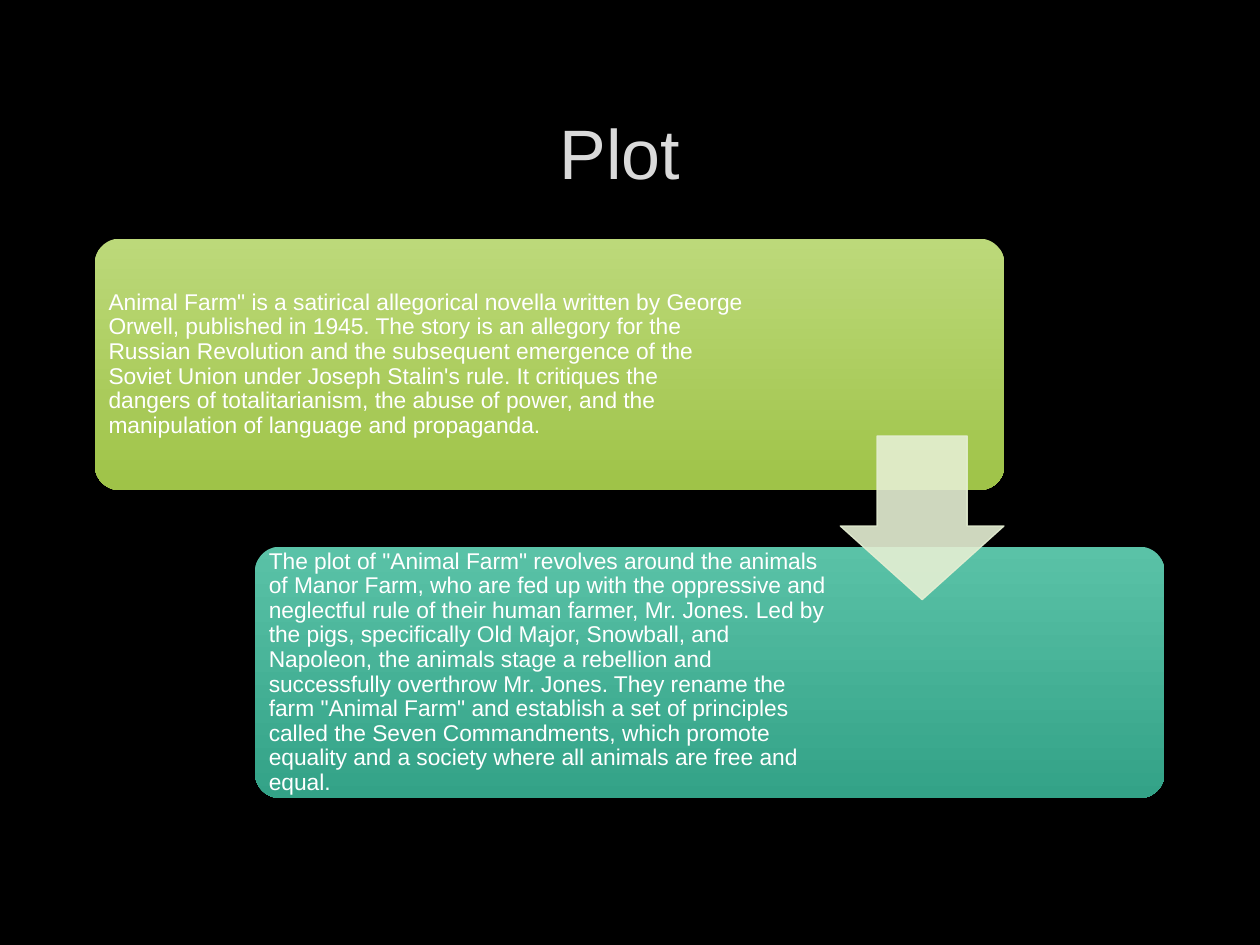
from lxml import etree
from pptx import Presentation
from pptx.dml.color import RGBColor
from pptx.enum import shapes, text
from pptx.oxml import ns
from pptx.util import Cm, Pt

BLACK = RGBColor(0x00, 0x00, 0x00)
GREY = RGBColor(0xDA, 0xDA, 0xDA)
WHITE = RGBColor(0xFF, 0xFF, 0xFF)
PALE = RGBColor(0xE5, 0xEF, 0xD3)
LIME = (RGBColor(0xBC, 0xD9, 0x7A), RGBColor(0x9F, 0xC3, 0x48))
TEAL = (RGBColor(0x5A, 0xC2, 0xA7), RGBColor(0x33, 0xA2, 0x87))

ABOUT = (
    "Animal Farm\" is a satirical allegorical novella written by George Orwell, "
    "published in 1945. The story is an allegory for the Russian Revolution and "
    "the subsequent emergence of the Soviet Union under Joseph Stalin's rule. It "
    "critiques the dangers of totalitarianism, the abuse of power, and the "
    "manipulation of language and propaganda."
)
STORY = (
    "The plot of \"Animal Farm\" revolves around the animals of Manor Farm, who "
    "are fed up with the oppressive and neglectful rule of their human farmer, "
    "Mr. Jones. Led by the pigs, specifically Old Major, Snowball, and Napoleon, "
    "the animals stage a rebellion and successfully overthrow Mr. Jones. They "
    "rename the farm \"Animal Farm\" and establish a set of principles called the "
    "Seven Commandments, which promote equality and a society where all animals "
    "are free and equal."
)


def style(para, size, color):
    for run in para.runs:
        run.font.name = "Arial"
        run.font.size = Pt(size)
        run.font.color.rgb = color


deck = Presentation()
deck.slide_width, deck.slide_height = Cm(25.4), Cm(19.05)
slide = deck.slides.add_slide(deck.slide_layouts[5])
slide.background.fill.solid()
slide.background.fill.fore_color.rgb = BLACK

title = slide.shapes.title
title.left, title.top = Cm(1.91), Cm(1.7)
title.width, title.height = Cm(21.56), Cm(2.69)
frame = title.text_frame
frame.text = "Plot "
frame.vertical_anchor = text.MSO_ANCHOR.MIDDLE
frame.paragraphs[0].alignment = text.PP_ALIGN.CENTER
style(frame.paragraphs[0], 40, GREY)

steps = [
    (1.91, 4.81, 13.08, LIME, ABOUT),
    (5.14, 11.02, 11.51, TEAL, STORY),
]
for left, top, width, shades, words in steps:
    card = slide.shapes.add_shape(
        shapes.MSO_SHAPE.ROUNDED_RECTANGLE, Cm(left), Cm(top), Cm(18.34), Cm(5.07)
    )
    card.adjustments[0] = 0.1
    card.shadow.inherit = False
    card.line.fill.background()
    card.fill.gradient()
    card.fill.gradient_angle = 270
    for stop, shade, place in zip(card.fill.gradient_stops, shades, (0, 1)):
        stop.color.rgb = shade
        stop.position = place

    box = slide.shapes.add_textbox(
        Cm(left + 0.15), Cm(top + 0.15), Cm(width), Cm(4.77)
    )
    frame = box.text_frame
    frame.word_wrap = True
    frame.vertical_anchor = text.MSO_ANCHOR.MIDDLE
    frame.margin_left = frame.margin_right = Cm(0.13)
    frame.margin_top = frame.margin_bottom = Cm(0.13)
    frame.text = words
    frame.paragraphs[0].line_spacing = 0.9
    style(frame.paragraphs[0], 13, WHITE)

arrow = slide.shapes.add_shape(
    shapes.MSO_SHAPE.DOWN_ARROW, Cm(16.94), Cm(8.79), Cm(3.3), Cm(3.3)
)
arrow.adjustments[0] = 0.55
arrow.adjustments[1] = 0.45
arrow.shadow.inherit = False
arrow.fill.solid()
arrow.fill.fore_color.rgb = PALE
arrow.line.color.rgb = PALE
arrow.line.width = Pt(0.75)
for tint in arrow.element.spPr.iter(ns.qn("a:srgbClr")):
    etree.SubElement(tint, ns.qn("a:alpha"), val="90000")

deck.save("out.pptx")
